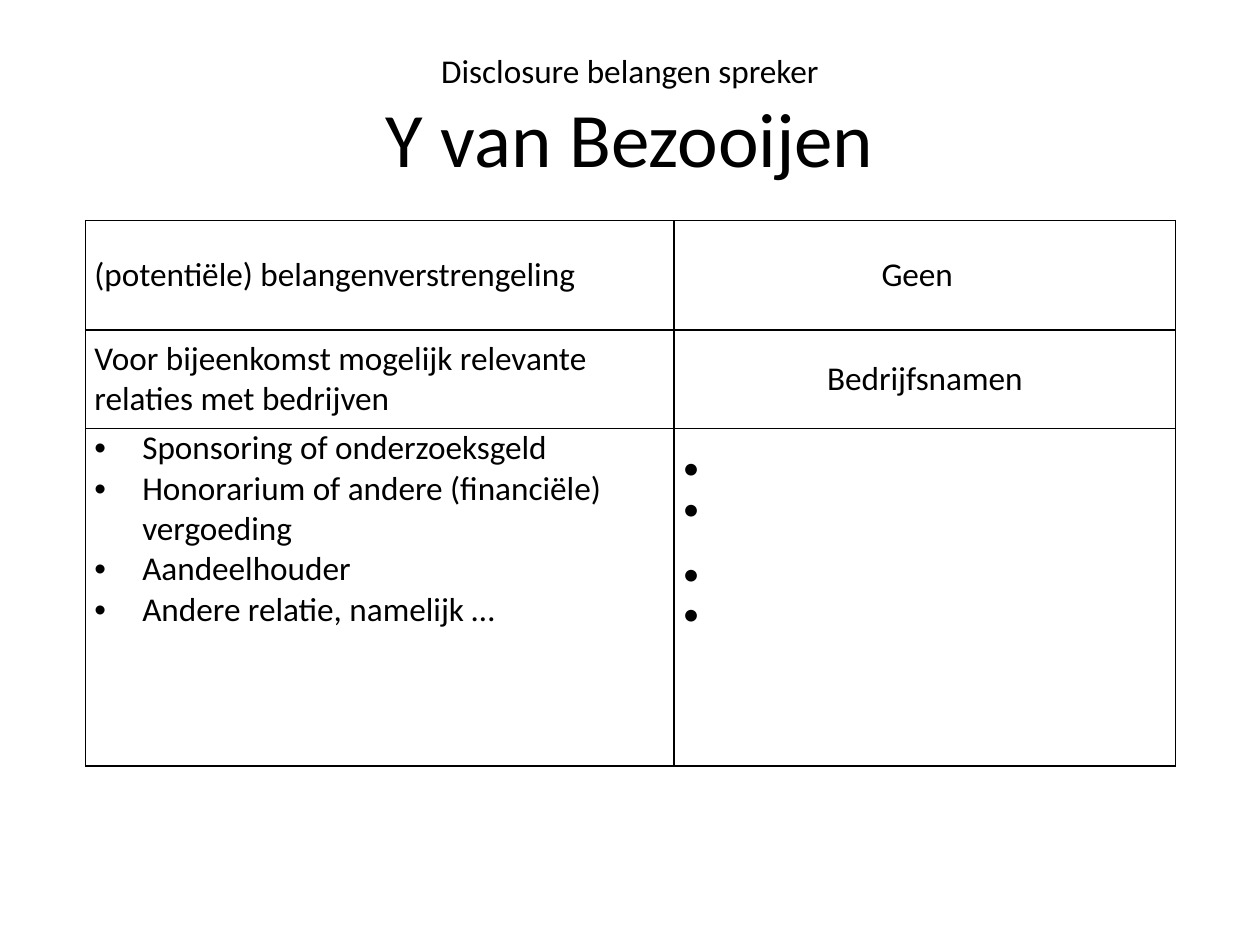
from dataclasses import dataclass

from lxml.etree import SubElement
from pptx import Presentation
from pptx.dml.color import RGBColor
from pptx.enum.text import MSO_ANCHOR as Anchor, MSO_AUTO_SIZE as AutoSize, PP_ALIGN as Align
from pptx.oxml.ns import qn
from pptx.util import Inches, Pt


@dataclass(frozen=True)
class Theme:
    font: str = "Calibri"
    ink: RGBColor = RGBColor(0, 0, 0)
    body: Pt = Pt(19)
    name: Pt = Pt(44)
    border: Pt = Pt(1)


THEME = Theme()
BULLET_INDENT = Inches(0.38)
COLUMNS = (4.67, 3.98)
ROWS = (0.87, 0.78, 2.68)
RELATIONS = (
    "Sponsoring of onderzoeksgeld",
    "Honorarium of andere (financiële) vergoeding",
    "Aandeelhouder",
    "Andere relatie, namelijk …",
)
STATEMENTS = (
    ("(potentiële) belangenverstrengeling", "Geen"),
    ("Voor bijeenkomst mogelijk relevante relaties met bedrijven", "Bedrijfsnamen"),
)


def add_text(paragraph, text, size=THEME.body):
    run = paragraph.add_run()
    run.text = text
    run.font.name = THEME.font
    run.font.size = size
    run.font.color.rgb = THEME.ink


def add_title(slide, left, top, width, height):
    title = slide.shapes.title
    box = {"left": left, "top": top, "width": width, "height": height}
    for side, length in box.items():
        setattr(title, side, Inches(length))
    frame = title.text_frame
    frame.auto_size = AutoSize.NONE
    frame.vertical_anchor = Anchor.MIDDLE
    heading = frame.paragraphs[0]
    heading.alignment = Align.CENTER
    add_text(heading, "Disclosure belangen spreker")
    heading.add_line_break()
    line_break = heading._p.find(qn("a:br"))
    SubElement(line_break, qn("a:rPr"), sz=str(int(THEME.body.pt * 100)))
    add_text(heading, "Y van Bezooijen", THEME.name)


def format_cell(cell):
    margins = {"margin_left": 0.07, "margin_right": 0.07, "margin_top": 0, "margin_bottom": 0}
    for margin, length in margins.items():
        setattr(cell, margin, Inches(length))
    properties = cell._tc.get_or_add_tcPr()
    for side in ("lnL", "lnR", "lnT", "lnB"):
        line = SubElement(properties, qn(f"a:{side}"), w=str(THEME.border))
        fill = SubElement(line, qn("a:solidFill"))
        SubElement(fill, qn("a:srgbClr"), val=str(THEME.ink))
    cell.fill.background()


def add_paragraphs(cell, lines):
    """Fill the cell with one paragraph per line and return the paragraphs."""
    frame = cell.text_frame
    paragraphs = [frame.paragraphs[0]] + [frame.add_paragraph() for _ in lines[1:]]
    for paragraph, line in zip(paragraphs, lines):
        add_text(paragraph, line)
    return paragraphs


def add_bullet(paragraph):
    properties = paragraph._p.get_or_add_pPr()
    properties.set("marL", str(BULLET_INDENT))
    properties.set("indent", str(-BULLET_INDENT))
    SubElement(properties, qn("a:buFont"), typeface="Arial")
    SubElement(properties, qn("a:buChar"), char="•")


def add_disclosure_table(slide, left, top):
    table = slide.shapes.add_table(
        len(ROWS), len(COLUMNS), Inches(left), Inches(top),
        Inches(sum(COLUMNS)), Inches(sum(ROWS)),
    ).table
    table.first_row = table.horz_banding = False
    for column, width in zip(table.columns, COLUMNS):
        column.width = Inches(width)
    for row, height in zip(table.rows, ROWS):
        row.height = Inches(height)
    for cell in table.iter_cells():
        format_cell(cell)

    for row, statement in enumerate(STATEMENTS):
        for column, text in enumerate(statement):
            cell = table.cell(row, column)
            cell.vertical_anchor = Anchor.MIDDLE
            paragraph, = add_paragraphs(cell, [text])
            paragraph.alignment = (Align.LEFT, Align.CENTER)[column]
    table.cell(0, 1).margin_right = Inches(0.19)

    relations, companies = (table.cell(2, column) for column in range(2))
    for paragraph in add_paragraphs(relations, RELATIONS):
        add_bullet(paragraph)
    companies.margin_top = Inches(0.16)
    company_lines = add_paragraphs(companies, ["•"] * len(RELATIONS))
    company_lines[2].space_before = Pt(14)


def main():
    deck = Presentation()
    deck.slide_width, deck.slide_height = Inches(10), Inches(7.5)
    slide = deck.slides.add_slide(deck.slide_layouts[5])
    add_disclosure_table(slide, 0.68, 1.75)
    add_title(slide, 0.5, 0.3, 9, 1.25)
    deck.save("out.pptx")


if __name__ == "__main__":
    main()
